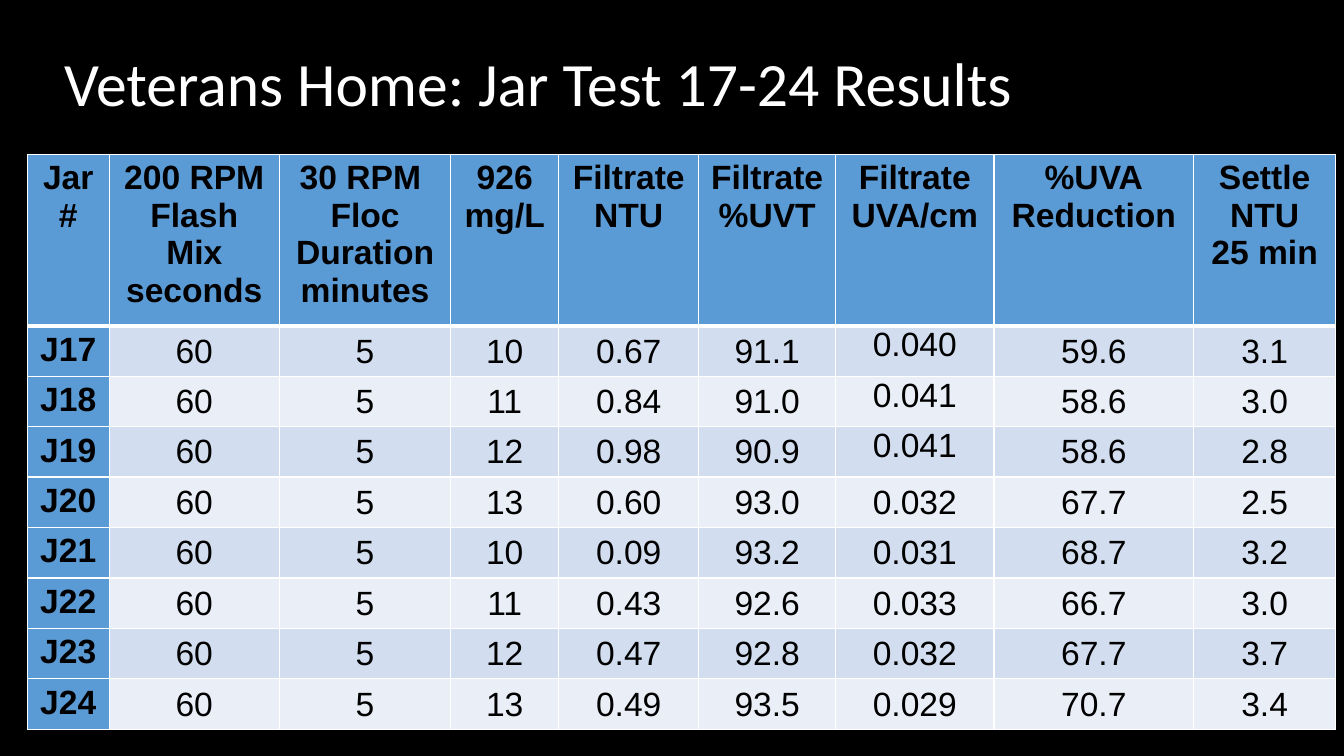
from lxml import etree
from pptx import Presentation
from pptx import util as u
from pptx.dml.color import RGBColor
from pptx.enum import text
from pptx.oxml.ns import qn

BLACK, WHITE, BLUE = "000000", "FFFFFF", "5B9BD5"
BANDS = ["D2DEEF", "EAEFF7"]
COLUMN_WIDTHS = [2.06, 4.29, 4.32, 2.72, 3.53, 3.45, 3.99, 5.03, 3.58]
ROW_HEIGHT = 1.04
UVA_COLUMN = 6
TOP_ALIGNED_JARS = ["J17", "J18", "J19"]

HEADINGS = [
    "Jar\n#", "200 RPM\nFlash\nMix\nseconds", "30 RPM \nFloc\nDuration\nminutes",
    "926\nmg/L", "Filtrate\nNTU", "Filtrate\n%UVT", "Filtrate\nUVA/cm",
    "%UVA\nReduction", "Settle\nNTU\n25 min",
]
RESULTS = [
    ["J17", "60", "5", "10", "0.67", "91.1", "0.040", "59.6", "3.1"],
    ["J18", "60", "5", "11", "0.84", "91.0", "0.041", "58.6", "3.0"],
    ["J19", "60", "5", "12", "0.98", "90.9", "0.041", "58.6", "2.8"],
    ["J20", "60", "5", "13", "0.60", "93.0", "0.032", "67.7", "2.5"],
    ["J21", "60", "5", "10", "0.09", "93.2", "0.031", "68.7", "3.2"],
    ["J22", "60", "5", "11", "0.43", "92.6", "0.033", "66.7", "3.0"],
    ["J23", "60", "5", "12", "0.47", "92.8", "0.032", "67.7", "3.7"],
    ["J24", "60", "5", "13", "0.49", "93.5", "0.029", "70.7", "3.4"],
]


def colour(value):
    """Turn a hex string into a colour."""
    return RGBColor.from_string(value)


def style_font(font, name, size, value, bold=False):
    """Set the typeface, size, colour and weight of a font."""
    font.name, font.size, font.bold = name, u.Pt(size), bold
    font.color.rgb = colour(value)


def add_borders(cell, top, bottom):
    """Draw white cell borders, one point wide at the sides."""
    properties = cell._tc.get_or_add_tcPr()
    widths = {"a:lnL": 1, "a:lnR": 1, "a:lnT": top, "a:lnB": bottom}
    for position, (side, width) in enumerate(widths.items()):
        line = etree.Element(qn(side), w=str(u.Pt(width)))
        fill = etree.SubElement(line, qn("a:solidFill"))
        etree.SubElement(fill, qn("a:srgbClr"), val=WHITE)
        properties.insert(position, line)


def fill_cell(cell, content, fill, bold):
    """Write centred text in a coloured cell."""
    cell.text = content
    cell.fill.solid()
    cell.fill.fore_color.rgb = colour(fill)
    for para in cell.text_frame.paragraphs:
        para.alignment = text.PP_ALIGN.CENTER
        for span in para.runs:
            style_font(span.font, "Arial", 24, BLACK, bold)


def add_title(page, left, top, width, height):
    """Place the slide title in the given box."""
    frame = page.shapes.add_textbox(left, top, width, height).text_frame
    frame.word_wrap = True
    frame.vertical_anchor = text.MSO_ANCHOR.MIDDLE
    frame.text = "Veterans Home: Jar Test 17-24 Results"
    para = frame.paragraphs[0]
    para.line_spacing = 0.9
    style_font(para.runs[0].font, "Calibri", 44, WHITE)


def add_results(page, left, top, width, height):
    """Place the table of jar test results in the given box."""
    rows = [HEADINGS] + RESULTS
    box = page.shapes.add_table(len(rows), len(HEADINGS), left, top, width, height)
    table = box.table
    table.first_col = True
    for column, share in zip(table.columns, COLUMN_WIDTHS):
        column.width = int(width * share / sum(COLUMN_WIDTHS))
    for r, values in enumerate(rows):
        table.rows[r].height = u.Cm(ROW_HEIGHT)
        for c, content in enumerate(values):
            cell = table.cell(r, c)
            label = r == 0 or c == 0
            fill_cell(cell, content, BLUE if label else BANDS[(r - 1) % 2], label)
            add_borders(cell, 3 if r == 1 else 1, 3 if r == 0 else 1)
            if label:
                continue
            cell.margin_left = cell.margin_right = cell.margin_top = u.Cm(0.02)
            cell.margin_bottom = 0
            if c != UVA_COLUMN or values[0] not in TOP_ALIGNED_JARS:
                cell.vertical_anchor = text.MSO_ANCHOR.MIDDLE
    box.height = height


def main():
    """Build the slide and save it."""
    deck = Presentation()
    deck.slide_width, deck.slide_height = u.Cm(33.87), u.Cm(19.05)
    page = deck.slides.add_slide(deck.slide_layouts[6])
    page.background.fill.solid()
    page.background.fill.fore_color.rgb = colour(BLACK)
    add_title(page, u.Cm(1.37), u.Cm(0.33), u.Cm(30.18), u.Cm(3.68))
    add_results(page, u.Cm(0.69), u.Cm(3.89), u.Cm(32.97), u.Cm(14.48))
    deck.save("out.pptx")


if __name__ == "__main__":
    main()
